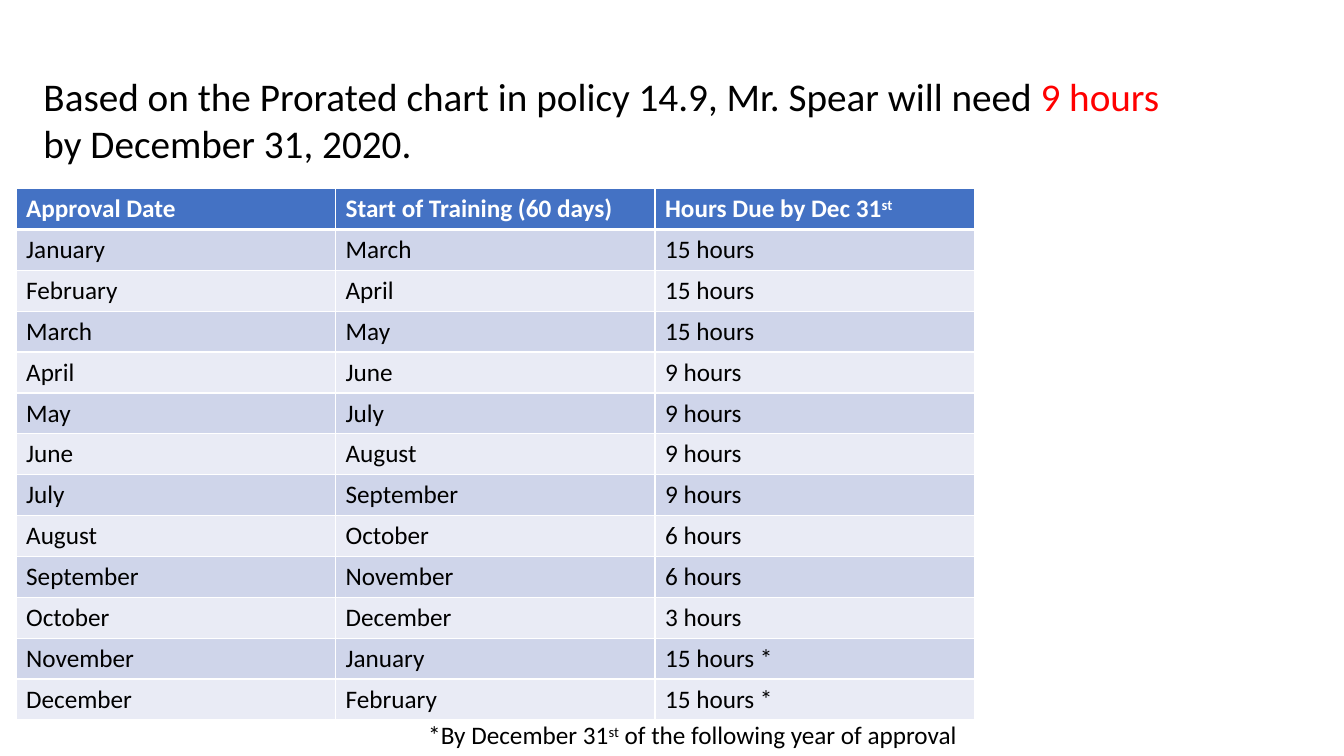
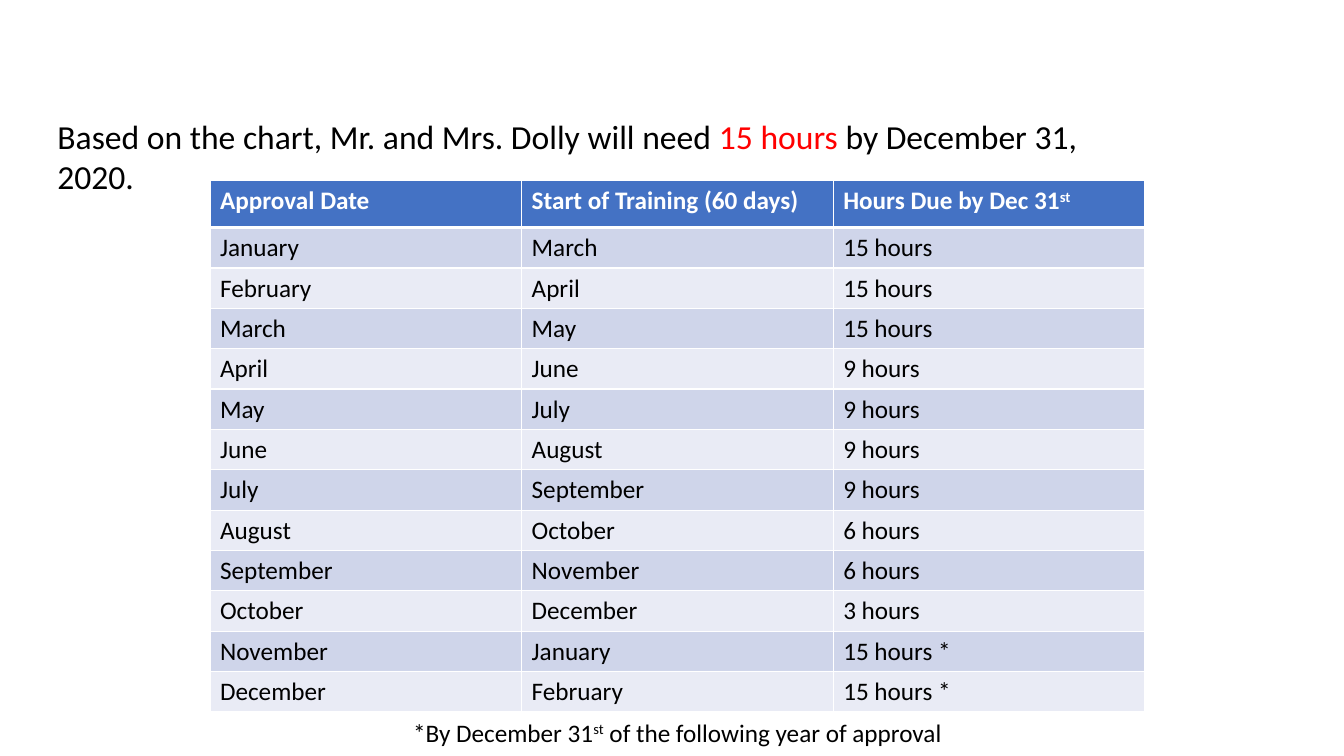
"""Builds two slides on prorated training hours."""
from dataclasses import dataclass

from lxml.etree import SubElement
from pptx import Presentation
from pptx.dml.color import RGBColor
from pptx.enum.text import MSO_AUTO_SIZE
from pptx.oxml.ns import qn
from pptx.util import Pt


@dataclass(frozen=True)
class Theme:
    font: str = "Calibri"
    ink: str = "000000"
    red: str = "FF0000"
    white: str = "FFFFFF"
    head: str = "4472C4"
    bands: tuple = ("CFD5EA", "E9EBF5")
    large: int = 28
    mid: int = 24
    small: int = 18
    thin: int = 1
    thick: int = 3


THEME = Theme()
MONTHS = ["January", "February", "March", "April", "May", "June", "July",
          "August", "September", "October", "November", "December"]
HOURS = ["15 hours"] * 3 + ["9 hours"] * 4 + ["6 hours"] * 2 + ["3 hours"] + ["15 hours *"] * 2
RAISED = ("st", {"raised": True})
HEADS = ["Approval Date", "Start of Training (60 days)", ["Hours Due by Dec 31", RAISED]]
ROWS = [HEADS] + [[month, MONTHS[(i + 2) % 12], HOURS[i]] for i, month in enumerate(MONTHS)]
NOTE = ["*By December 31", RAISED, " of the following year of approval"]


def write(frame, text, **style):
    parts = [text] if isinstance(text, str) else text
    para = frame.paragraphs[0]
    for part in parts:
        words, extra = (part, {}) if isinstance(part, str) else part
        look = {"size": THEME.small, "color": THEME.ink, "bold": False, **style, **extra}
        run = para.add_run()
        run.text = words
        run.font.name = THEME.font
        run.font.size = Pt(look["size"])
        run.font.bold = look["bold"]
        run.font.color.rgb = RGBColor.from_string(look["color"])
        if look.get("raised"):
            run.font._element.set("baseline", "30000")


class Deck:
    def __init__(self, theme):
        self.theme = theme
        self.show = Presentation()
        self.show.slide_width = Pt(960)
        self.show.slide_height = Pt(540)
        self.slide = None

    def page(self):
        self.slide = self.show.slides.add_slide(self.show.slide_layouts[6])

    def text(self, x, y, wide, high, text, grow=True, **style):
        frame = self.slide.shapes.add_textbox(Pt(x), Pt(y), Pt(wide), Pt(high)).text_frame
        frame.word_wrap = True
        frame.auto_size = MSO_AUTO_SIZE.SHAPE_TO_FIT_TEXT if grow else MSO_AUTO_SIZE.NONE
        write(frame, text, **style)

    def edge(self, cell, side, width):
        line = SubElement(cell._tc.get_or_add_tcPr(), qn("a:ln" + side), w=str(Pt(width)))
        fill = SubElement(line, qn("a:solidFill"))
        SubElement(fill, qn("a:srgbClr"), val=self.theme.white)

    def table(self, x, y, wide, top, step):
        count, cols = len(ROWS), len(HEADS)
        high = top + step * (count - 1)
        grid = self.slide.shapes.add_table(
            count, cols, Pt(x), Pt(y), Pt(wide * cols), Pt(high)).table
        for col in grid.columns:
            col.width = Pt(wide)
        for i, row in enumerate(ROWS):
            grid.rows[i].height = Pt(step if i else top)
            for j, text in enumerate(row):
                self.cell(grid.cell(i, j), text, i)

    def cell(self, cell, text, row):
        theme = self.theme
        heavy = {"B": row == 0, "T": row == 1}
        for side in "LRTB":
            self.edge(cell, side, theme.thick if heavy.get(side) else theme.thin)
        cell.fill.solid()
        shade = theme.bands[(row - 1) % 2] if row else theme.head
        cell.fill.fore_color.rgb = RGBColor.from_string(shade)
        write(cell.text_frame, text, bold=row == 0, color=theme.ink if row else theme.white)


def main():
    deck = Deck(THEME)
    red = {"color": THEME.red}

    deck.page()
    deck.text(24, 48, 828, 342.5,
              ["Based on the Prorated chart in policy 14.9, Mr. Spear will need ",
               ("9 hours", red), " by December 31, 2020."],
              grow=False, size=THEME.large)
    deck.table(11.5, 134.7, 228.2, 29.2, 29.2)
    deck.text(298.8, 510.5, 600, 29, NOTE)

    deck.page()
    deck.text(34, 79.2, 784, 65.5,
              ["Based on the chart, Mr. and Mrs. Dolly will need ",
               ("15 hours ", red), "by December 31, 2020."],
              size=THEME.mid)
    deck.table(150, 129, 222.6, 33.6, 28.8)
    deck.text(288, 508.5, 590, 29, NOTE)

    deck.show.save("out.pptx")


if __name__ == "__main__":
    main()
